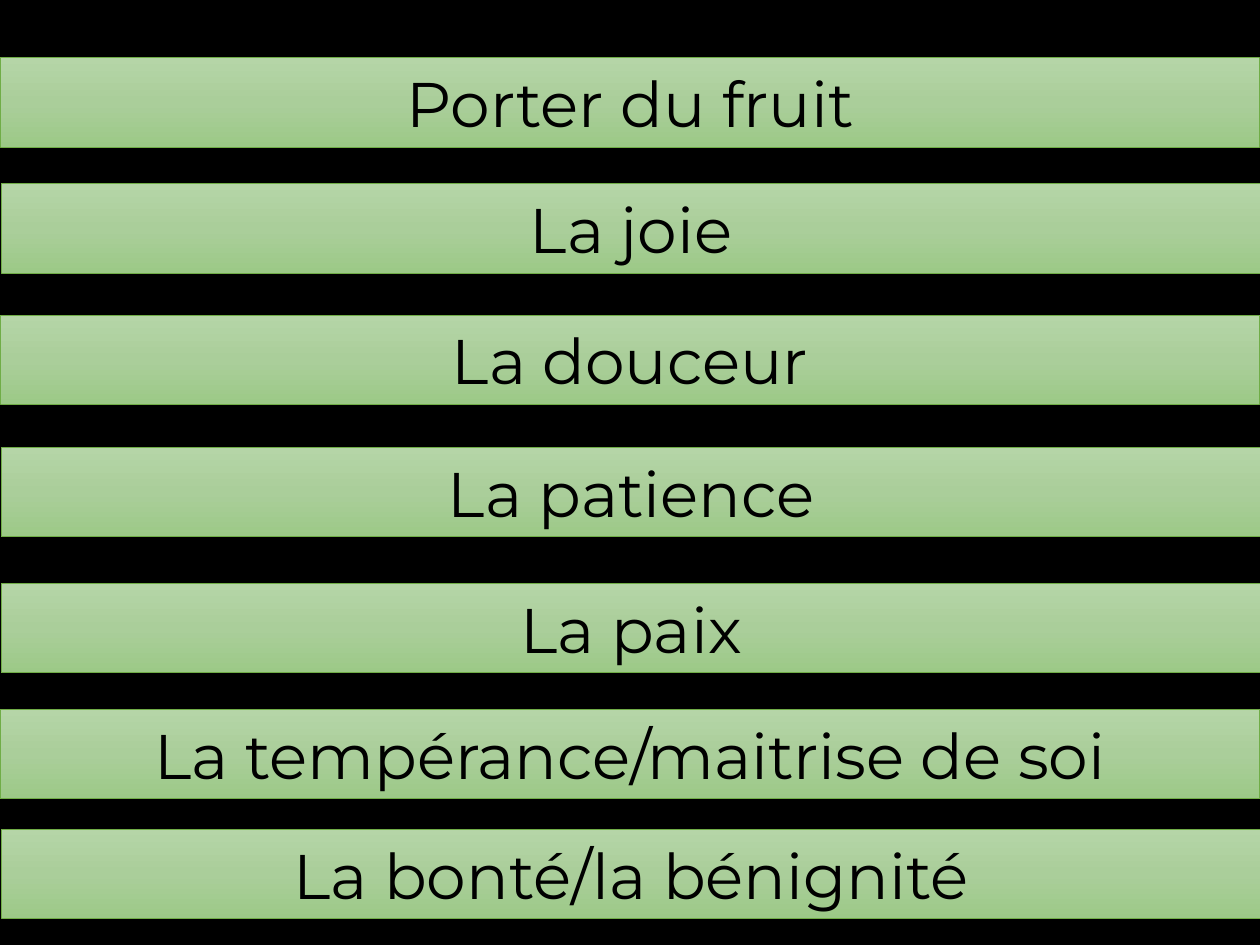
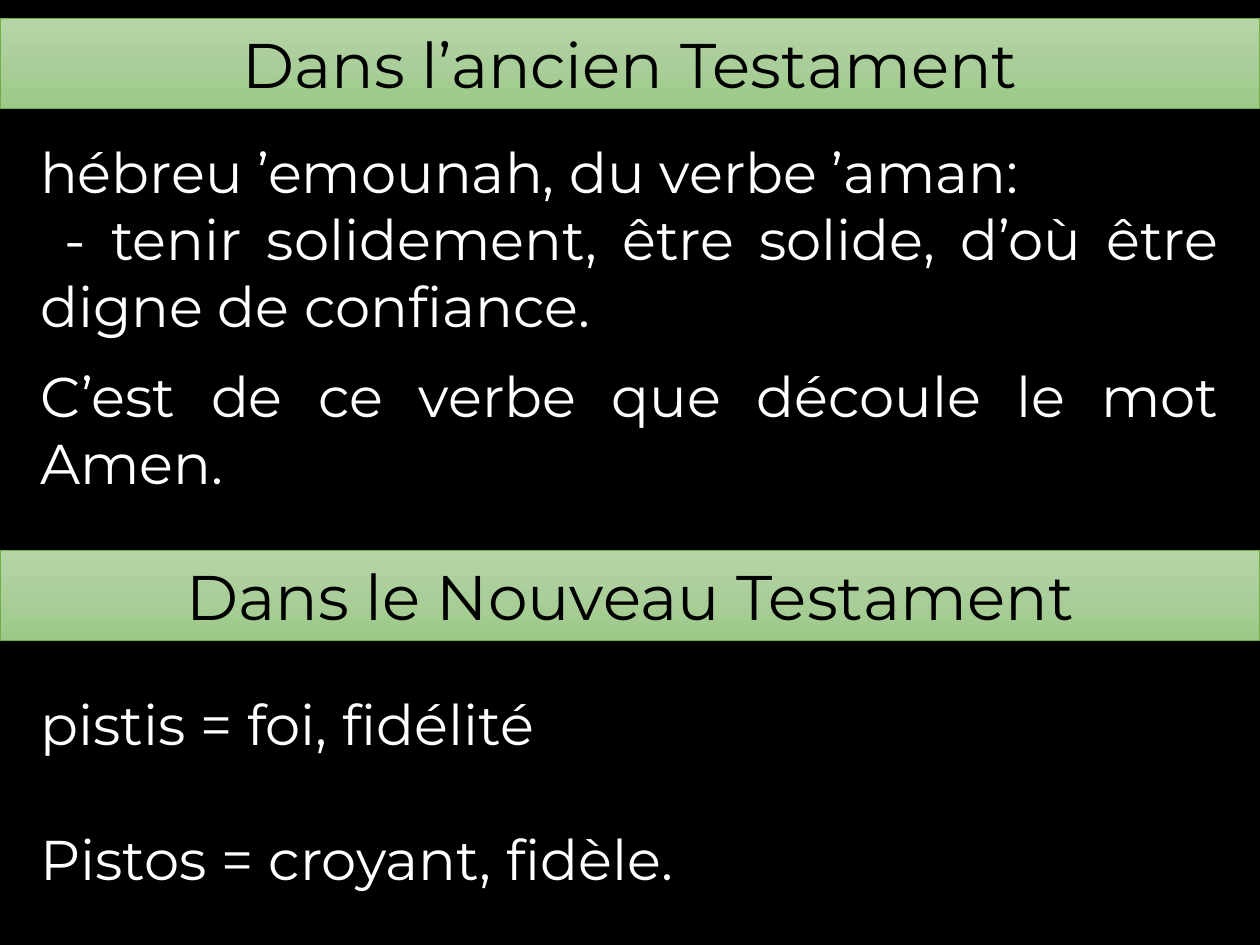
import copy
import pptx
import pptx.util
import pptx.dml.color
import pptx.enum.shapes
import pptx.enum.text
import pptx.oxml.ns

Inches = pptx.util.Inches
Pt = pptx.util.Pt
RGBColor = pptx.dml.color.RGBColor
PP_ALIGN = pptx.enum.text.PP_ALIGN

BLACK = RGBColor(0x00, 0x00, 0x00)
WHITE = RGBColor(0xFF, 0xFF, 0xFF)
GREEN_LINE = RGBColor(0x70, 0xAD, 0x47)
GREEN_TOP = RGBColor(0xB5, 0xD5, 0xA7)
GREEN_MIDDLE = RGBColor(0xAA, 0xCE, 0x9A)
GREEN_BOTTOM = RGBColor(0x9C, 0xC9, 0x87)


class Deck:
    font = "Montserrat"
    band_size = 36
    body_size = 32

    def __init__(self):
        self.prs = pptx.Presentation()
        self.prs.slide_width = Inches(10)
        self.prs.slide_height = Inches(7.5)
        self.s = None

    def slide(self):
        self.s = self.prs.slides.add_slide(self.prs.slide_layouts[6])
        self.s.background.fill.solid()
        self.s.background.fill.fore_color.rgb = BLACK

    def paragraph(self, p, text, size, color, align, space_before=0):
        p.alignment = align
        p.space_before = Pt(space_before)
        r = p.add_run()
        r.text = text
        r.font.name = self.font
        r.font.size = Pt(size)
        r.font.color.rgb = color

    def gradient(self, sp):
        sp.fill.gradient()
        sp.fill.gradient_angle = 270
        stops = sp._element.spPr.find(".//" + pptx.oxml.ns.qn("a:gsLst"))
        stops.insert(1, copy.deepcopy(stops[0]))
        colors = (GREEN_TOP, GREEN_MIDDLE, GREEN_BOTTOM)
        for i, (stop, color) in enumerate(zip(sp.fill.gradient_stops, colors)):
            stop.position = i / 2
            stop.color.rgb = color

    def band(self, text, top, left=0):
        sp = self.s.shapes.add_shape(
            pptx.enum.shapes.MSO_SHAPE.RECTANGLE,
            Inches(left), Inches(top), Inches(10), Inches(0.71))
        sp.shadow.inherit = False
        self.gradient(sp)
        sp.line.color.rgb = GREEN_LINE
        sp.line.width = Pt(0.5)
        tf = sp.text_frame
        tf.word_wrap = True
        tf.auto_size = pptx.enum.text.MSO_AUTO_SIZE.SHAPE_TO_FIT_TEXT
        self.paragraph(tf.paragraphs[0], text, self.band_size, BLACK, PP_ALIGN.CENTER)

    def body(self, top, height, lines):
        sp = self.s.shapes.add_textbox(
            Inches(0.22), Inches(top), Inches(9.56), Inches(height))
        tf = sp.text_frame
        tf.word_wrap = True
        tf.auto_size = pptx.enum.text.MSO_AUTO_SIZE.SHAPE_TO_FIT_TEXT
        for i, (text, space_before) in enumerate(lines):
            p = tf.add_paragraph() if i else tf.paragraphs[0]
            self.paragraph(p, text, self.body_size, WHITE, PP_ALIGN.JUSTIFY, space_before)


def fruits(deck):
    deck.slide()
    for text, top, left in (
        ("Porter du fruit", 0.46, 0),
        ("La joie", 1.46, 0.01),
        ("La douceur", 2.5, 0),
        ("La patience", 3.55, 0.01),
        ("La paix", 4.63, 0.01),
        ("La tempérance/maitrise de soi", 5.63, 0),
        ("La bonté/la bénignité", 6.58, 0.01),
    ):
        deck.band(text, top, left)


def testaments(deck):
    deck.slide()
    deck.band("Dans l’ancien Testament", 0.15)
    deck.body(1.04, 2.97, (
        ("hébreu ’emounah, du verbe ’aman:", 0),
        (" - tenir solidement, être solide, d’où être digne de confiance.", 0),
        ("C’est de ce verbe que découle le mot Amen.", 12.8),
    ))
    deck.band("Dans le Nouveau Testament", 4.37)
    deck.body(5.42, 1.72, (
        ("pistis = foi, fidélité", 0),
        ("Pistos = croyant, fidèle.", 39),
    ))


def main():
    deck = Deck()
    fruits(deck)
    testaments(deck)
    deck.prs.save("out.pptx")


if __name__ == "__main__":
    main()
